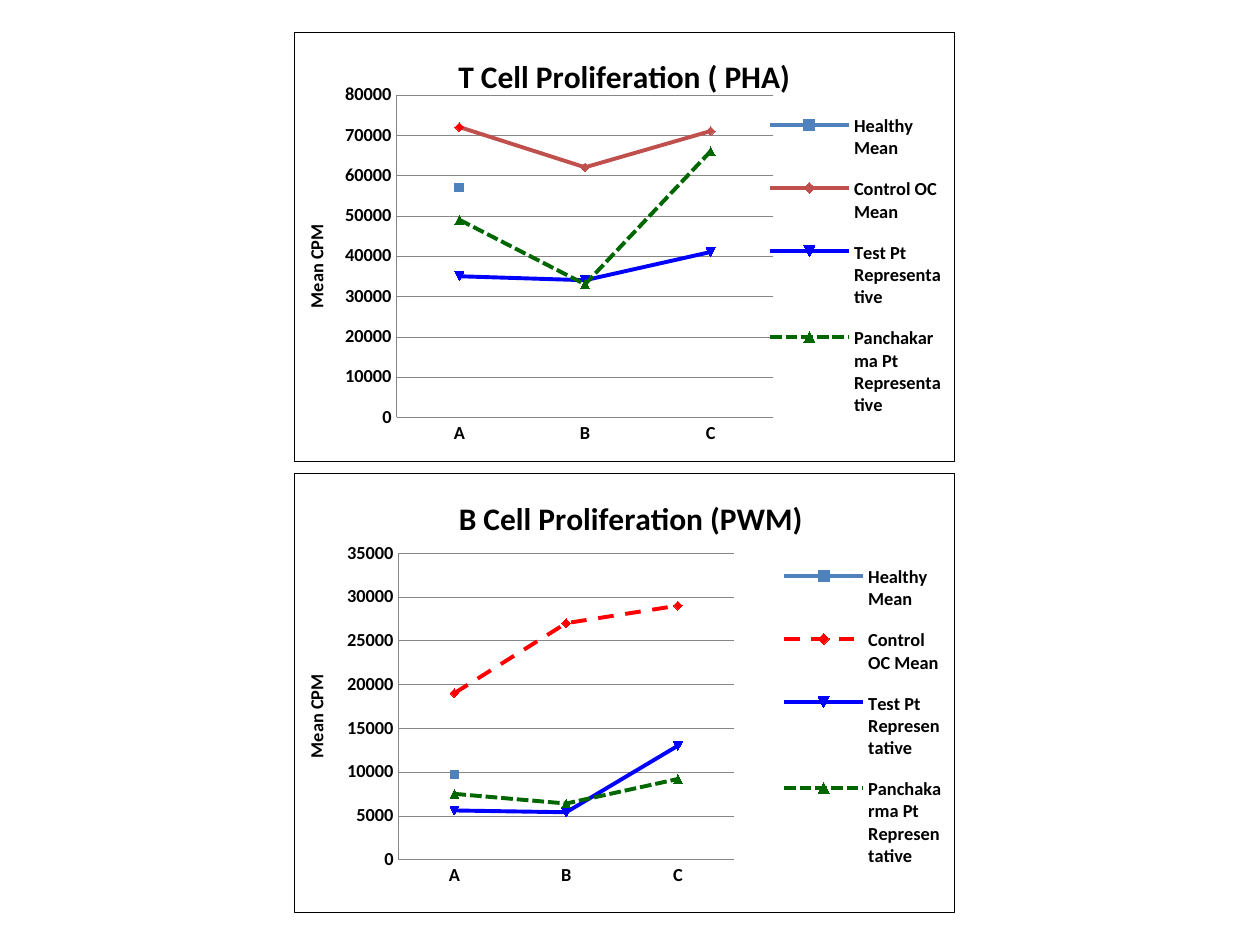
import pptx
import pptx.util
import pptx.oxml
import pptx.oxml.ns
import pptx.chart.data
import pptx.dml.color
import pptx.enum.chart
import pptx.enum.dml
from dataclasses import dataclass
from typing import Optional

Inches, Pt = pptx.util.Inches, pptx.util.Pt
RGB = pptx.dml.color.RGBColor
Dash = pptx.enum.dml.MSO_LINE
Enum = pptx.enum.chart
qn = pptx.oxml.ns.qn
NS = pptx.oxml.ns.nsdecls("c", "a")


@dataclass(frozen=True)
class Theme:
    font: str = "Calibri"
    ink: str = "000000"
    grid: str = "868686"
    blue: str = "4F81BD"
    brick: str = "C0504D"
    red: str = "FF0000"
    test: str = "0000FF"
    green: str = "006600"
    head: float = 18
    text: float = 10.5
    line: float = 2.25
    edge: float = 0.75
    hair: float = 0.25


THEME = Theme()


@dataclass(frozen=True)
class Series:
    name: str
    vals: tuple
    color: str
    dash: Optional[object] = None
    first: Optional[str] = None  # colour of the first marker


@dataclass(frozen=True)
class Panel:
    title: str
    top: float
    high: float
    peak: int
    step: int
    plot: tuple
    key: tuple
    head: tuple
    label: tuple
    rows: tuple


def rows(well: tuple, ctrl: tuple, test: tuple, pancha: tuple,
         color: str, dash=None, first=None) -> tuple:
    """The four groups, which differ only in values and control style."""
    return (
        Series("Healthy Mean", well, THEME.blue),
        Series("Control OC Mean", ctrl, color, dash, first),
        Series("Test Pt Representative", test, THEME.test),
        Series("Panchakarma Pt Representative", pancha, THEME.green,
               Dash.SQUARE_DOT),
    )


PANELS = (
    Panel("T Cell Proliferation ( PHA)", 0.25, 3.42, 80000, 10000,
          (0.155, 0.146, 0.571, 0.751), (0.73, 0.15, 0.26, 0.79),
          (0.24, 0.04), (0.01, 0.44),
          rows((57000, None, None), (72000, 62000, 71000),
               (35000, 34000, 41000), (49000, 33000, 66000),
               THEME.brick, first=THEME.red)),
    Panel(" B Cell Proliferation (PWM)", 3.75, 3.5, 35000, 5000,
          (0.158, 0.182, 0.508, 0.697), (0.75, 0.17, 0.24, 0.77),
          (0.23, 0.04), (0.01, 0.45),
          rows((9700, None, None), (19000, 27000, 29000),
               (5600, 5400, 13000), (7500, 6400, 9200),
               THEME.red, Dash.DASH)),
)


def place(node, spot: tuple, index: int = 1, inner: bool = False) -> None:
    """Give a chart part a fixed place, in fractions of the chart."""
    old = node.find(qn("c:layout"))
    if old is not None:
        node.remove(old)
    mode = '<c:layoutTarget val="inner"/>' if inner else ""
    mode += '<c:xMode val="edge"/><c:yMode val="edge"/>'
    size = "".join(f'<c:{tag} val="{num}"/>' for tag, num in zip("xywh", spot))
    node.insert(index, pptx.oxml.parse_xml(
        f"<c:layout {NS}><c:manualLayout>{mode}{size}"
        "</c:manualLayout></c:layout>"))


def style(font, size: float) -> None:
    font.name, font.size, font.bold = THEME.font, Pt(size), True
    font.color.rgb = RGB.from_string(THEME.ink)


def stroke(line, color: str, width: float) -> None:
    line.color.rgb = RGB.from_string(color)
    line.width = Pt(width)


def label(title, text: str, size: float, spot: tuple) -> None:
    run = title.text_frame.paragraphs[0].add_run()
    run.text = text
    style(run.font, size)
    place(title._element, spot)


def frame(chart) -> None:
    """White area with a thin border."""
    chart._chartSpace.find(qn("c:txPr")).addprevious(pptx.oxml.parse_xml(
        f"<c:spPr {NS}><a:solidFill><a:srgbClr val='FFFFFF'/></a:solidFill>"
        f"<a:ln w='{Pt(THEME.edge)}'><a:solidFill>"
        f"<a:srgbClr val='{THEME.ink}'/></a:solidFill></a:ln></c:spPr>"))


def paint(row: Series, item) -> None:
    item.smooth = False
    stroke(item.format.line, row.color, THEME.line)
    if row.dash is not None:
        item.format.line.dash_style = row.dash
    dots = [(item.marker, row.color)]
    if row.first:
        point = item.points[0]
        stroke(point.format.line, row.first, THEME.line)
        dots.append((point.marker, row.first))
    for mark, color in dots:
        mark.style, mark.size = Enum.XL_MARKER_STYLE.AUTOMATIC, 5
        mark.format.fill.solid()
        mark.format.fill.fore_color.rgb = RGB.from_string(color)
        stroke(mark.format.line, color, THEME.edge)


def draw(slide, panel: Panel) -> None:
    data = pptx.chart.data.CategoryChartData()
    data.categories = "ABC"
    for row in panel.rows:
        data.add_series(row.name, row.vals)
    chart = slide.shapes.add_chart(
        Enum.XL_CHART_TYPE.LINE_MARKERS, Inches(2.33), Inches(panel.top),
        Inches(5.25), Inches(panel.high), data).chart
    style(chart.font, THEME.text)
    frame(chart)

    # Title, legend and plot area
    chart.has_title = True
    label(chart.chart_title, panel.title, THEME.head, panel.head)
    chart.has_legend = True
    chart.legend.position = Enum.XL_LEGEND_POSITION.RIGHT
    chart.legend.include_in_layout = False
    place(chart.legend._element, panel.key)
    area = chart._chartSpace.find(".//" + qn("c:plotArea"))
    place(area, panel.plot, 0, True)

    # Axes
    side = chart.value_axis
    side.minimum_scale, side.maximum_scale = 0, panel.peak
    side.major_unit = panel.step
    side.has_major_gridlines = True
    stroke(side.major_gridlines.format.line, THEME.grid, THEME.hair)
    side.has_title = True
    label(side.axis_title, "Mean CPM", THEME.text, panel.label)
    turn = side.axis_title.text_frame._txBody.bodyPr
    turn.set("rot", "-5400000")
    turn.set("vert", "horz")
    for axis in (side, chart.category_axis):
        axis.major_tick_mark = axis.minor_tick_mark = Enum.XL_TICK_MARK.NONE
        stroke(axis.format.line, THEME.grid, THEME.hair)

    # Lines
    plot = chart.plots[0]
    plot.vary_by_categories = False
    for row, item in zip(panel.rows, plot.series):
        paint(row, item)


def main() -> None:
    deck = pptx.Presentation()
    deck.slide_width, deck.slide_height = Inches(10), Inches(7.5)
    slide = deck.slides.add_slide(deck.slide_layouts[6])
    for panel in PANELS:
        draw(slide, panel)
    deck.save("out.pptx")


if __name__ == "__main__":
    main()
